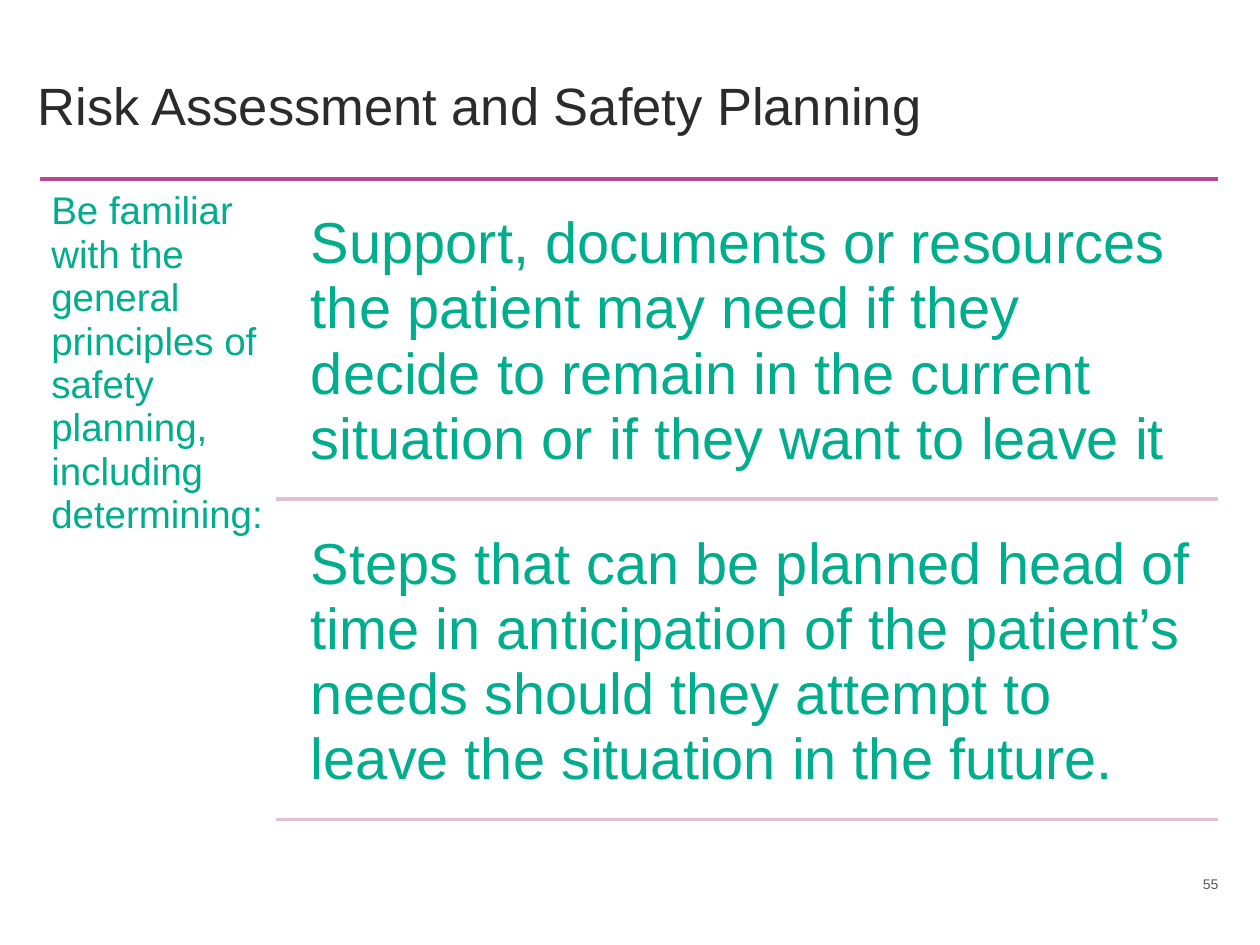
import pptx
import pptx.dml.color
import pptx.enum.shapes
import pptx.enum.text
import pptx.oxml
import pptx.util
from dataclasses import dataclass

Pt = pptx.util.Pt
ANCHOR = pptx.enum.text.MSO_ANCHOR
ALIGN = pptx.enum.text.PP_ALIGN


@dataclass(frozen=True)
class Theme:
    font: str = "Arial"
    ink: str = "2B2B2B"
    grey: str = "565656"
    green: str = "00AD8D"
    magenta: str = "B94796"
    pale_pink: str = "E0C1D3"
    title_size: int = 30
    lead_size: int = 22
    point_size: int = 33
    number_size: int = 8
    rule_width: int = 2
    line_spacing: float = 0.94


def write_text(frame, text, *, font, size, color, align=ALIGN.LEFT,
               anchor=ANCHOR.TOP, insets=(0, 0, 0, 0), spacing=1.0):
    frame.word_wrap = True
    frame.auto_size = pptx.enum.text.MSO_AUTO_SIZE.NONE
    frame.vertical_anchor = anchor
    (frame.margin_left, frame.margin_top,
     frame.margin_right, frame.margin_bottom) = map(Pt, insets)
    para = frame.paragraphs[0]
    para.alignment = align
    para.line_spacing = spacing
    para.space_before = Pt(0)
    span = para.add_run()
    span.text = text
    span.font.name = font
    span.font.size = Pt(size)
    span.font.color.rgb = pptx.dml.color.RGBColor.from_string(color)


class SlideBuilder:
    def __init__(self, page, theme):
        self.page = page
        self.theme = theme

    def title(self, text, left, top, width, height):
        box = self.page.shapes.title
        box.left, box.top, box.width, box.height = map(Pt, (left, top, width, height))
        write_text(box.text_frame, text, font=self.theme.font,
                   size=self.theme.title_size, color=self.theme.ink,
                   anchor=ANCHOR.MIDDLE, insets=(5.76, 0, 0, 0))

    def text(self, text, left, top, width, height, **style):
        box = self.page.shapes.add_textbox(*map(Pt, (left, top, width, height)))
        write_text(box.text_frame, text, font=self.theme.font, **style)

    def rule(self, left, right, y, color):
        line = self.page.shapes.add_connector(
            pptx.enum.shapes.MSO_CONNECTOR.STRAIGHT, *map(Pt, (left, y, right, y)))
        line.line.color.rgb = pptx.dml.color.RGBColor.from_string(color)
        line.line.width = Pt(self.theme.rule_width)
        properties = line._element.spPr
        properties.append(pptx.oxml.parse_xml(
            '<a:effectLst xmlns:a="http://schemas.openxmlformats.org/drawingml/2006/main"/>'))


def main():
    theme = Theme()
    deck = pptx.Presentation()
    deck.slide_width, deck.slide_height = Pt(720), Pt(540)
    slide = SlideBuilder(deck.slides.add_slide(deck.slide_layouts[5]), theme)

    left, right, top = 23, 696.24, 102.24
    lead_width = 134.64
    points_left = left + lead_width
    indent, gap, point_height = 10.1, 8.7, 174.3

    slide.title("Risk Assessment and Safety Planning", 15.84, 23.76, 680.4, 72)
    slide.rule(left, right, top, theme.magenta)
    slide.text("Be familiar with the general principles of safety planning, "
               "including determining:", left, top, lead_width, 375,
               size=theme.lead_size, color=theme.green, insets=(6.4,) * 4,
               spacing=theme.line_spacing)

    points = [
        "Support, documents or resources the patient may need if they decide "
        "to remain in the current situation or if they want to leave it",
        "Steps that can be planned head of time in anticipation of the patient’s "
        "needs should they attempt to leave the situation in the future.",
    ]
    for index, point in enumerate(points):
        point_top = top + gap + index * (point_height + gap)
        slide.text(point, points_left + indent, point_top,
                   right - points_left - indent, point_height,
                   size=theme.point_size, color=theme.green, insets=(10,) * 4,
                   spacing=theme.line_spacing)
        slide.rule(points_left, right, point_top + point_height, theme.pale_pink)

    slide.text("55", 653, 491, 50.4, 28.8, size=theme.number_size,
               color=theme.grey, align=ALIGN.RIGHT, anchor=ANCHOR.MIDDLE,
               insets=(7.2, 3.6, 7.2, 3.6))
    deck.save("out.pptx")


if __name__ == "__main__":
    main()
